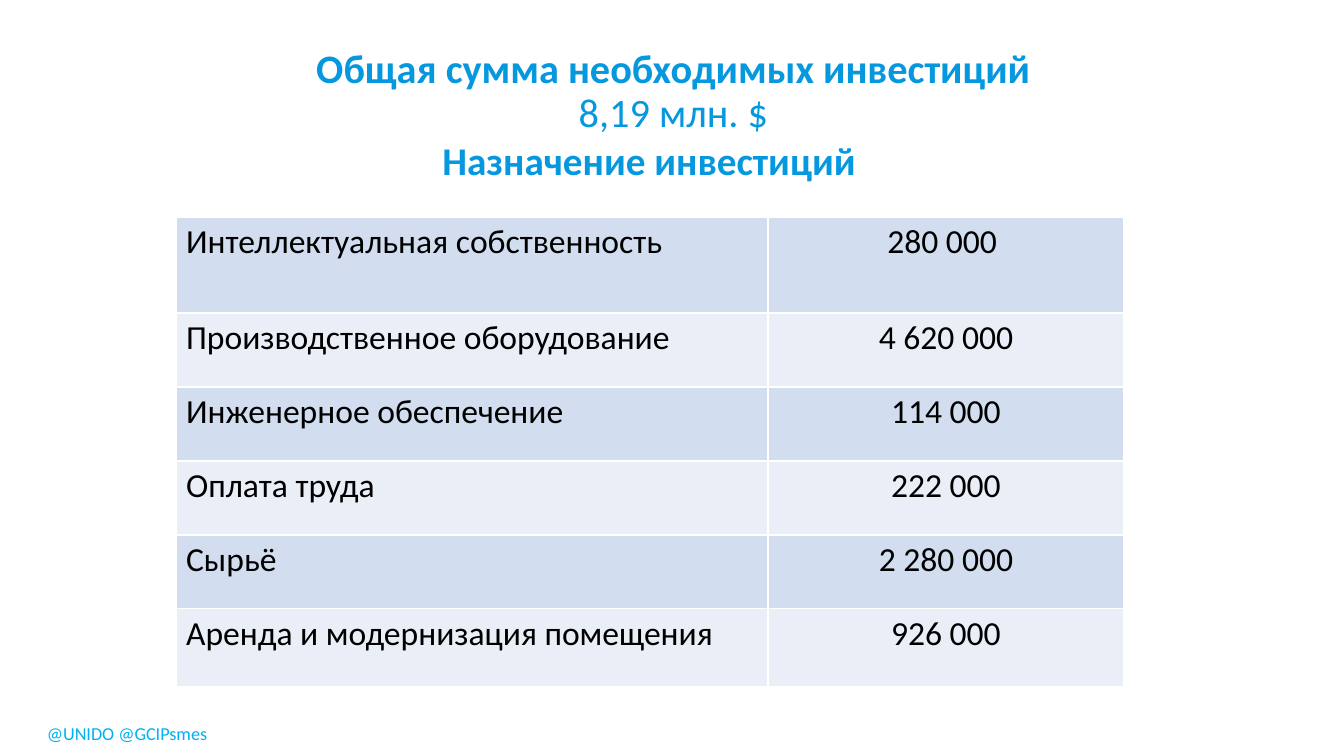
import pptx
import pptx.util
import pptx.dml.color
import pptx.enum.text
import pptx.oxml.ns
from lxml import etree

COLORS = {"heading": "0698DF", "footer": "00B0F0", "text": "000000",
          "odd": "D2DEEF", "even": "EAEFF7", "border": "FFFFFF"}
FONT = "Calibri"
ALIGN = pptx.enum.text.PP_ALIGN
ANCHOR = pptx.enum.text.MSO_ANCHOR

INVESTMENTS = [
    ("Интеллектуальная собственность", "280 000 "),
    ("Производственное оборудование", "4 620 000"),
    ("Инженерное обеспечение", "114 000"),
    ("Оплата труда", "222 000"),
    ("Сырьё", "2 280 000"),
    ("Аренда и модернизация помещения", "926 000"),
]


def px(n):
    return pptx.util.Emu(round(n * 914400 / 100.8))


def rgb(name):
    return pptx.dml.color.RGBColor.from_string(COLORS[name])


def apply(target, values):
    for name, value in values.items():
        setattr(target, name, value)


class Deck:
    def __init__(self):
        self.prs = pptx.Presentation()
        apply(self.prs, {"slide_width": px(1344), "slide_height": px(756)})
        self.s = self.prs.slides.add_slide(self.prs.slide_layouts[5])

    def run(self, p, text, size, color, bold=False):
        r = p.add_run()
        r.text = text
        apply(r.font, {"name": FONT, "size": pptx.util.Pt(size), "bold": bold})
        r.font.color.rgb = rgb(color)

    def title(self, box, lines, size, frame):
        sp = self.s.shapes.title
        apply(sp, dict(zip(("left", "top", "width", "height"), map(px, box))))
        tf = sp.text_frame
        apply(tf, {"auto_size": pptx.enum.text.MSO_AUTO_SIZE.NONE, **frame})
        p = tf.paragraphs[0]
        apply(p, {"alignment": ALIGN.CENTER, "line_spacing": 0.9})
        for i, (text, bold) in enumerate(lines):
            if i:
                p.add_line_break()
            self.run(p, text, size, "heading", bold)

    def text(self, box, text, size, color, bold=False, frame={}, para={}):
        tf = self.s.shapes.add_textbox(*map(px, box)).text_frame
        apply(tf, frame)
        p = tf.paragraphs[0]
        apply(p, para)
        self.run(p, text, size, color, bold)

    def cell(self, cell, text, align, fill):
        # Borders come before the fill in the cell properties
        tcPr = cell._tc.get_or_add_tcPr()
        for side in ("lnL", "lnR", "lnT", "lnB"):
            ln = etree.SubElement(tcPr, pptx.oxml.ns.qn("a:" + side), w="12700")
            solid = etree.SubElement(ln, pptx.oxml.ns.qn("a:solidFill"))
            etree.SubElement(solid, pptx.oxml.ns.qn("a:srgbClr"), val=COLORS["border"])
        cell.fill.solid()
        cell.fill.fore_color.rgb = rgb(fill)
        p = cell.text_frame.paragraphs[0]
        p.alignment = align
        self.run(p, text, 24, "text")

    def table(self, left, top, widths, heights, rows):
        box = (left, top, sum(widths), sum(heights))
        table = self.s.shapes.add_table(len(rows), len(widths), *map(px, box)).table
        table.first_row = False
        for col, width in zip(table.columns, widths):
            col.width = px(width)
        for i, (row, height, values) in enumerate(zip(table.rows, heights, rows)):
            row.height = px(height)
            fill = "even" if i % 2 else "odd"
            for cell, value, align in zip(row.cells, values, (ALIGN.LEFT, ALIGN.CENTER)):
                self.cell(cell, value, align, fill)


def main():
    deck = Deck()

    # Footer handles
    deck.text((37, 717, 182, 32), "@UNIDO @GCIPsmes", 13, "footer",
              frame={"word_wrap": False})

    # Headings
    deck.title((238, 40, 871, 149),
               [("Общая сумма необходимых инвестиций", True), ("8,19 млн. $", False)],
               28.8, {"vertical_anchor": ANCHOR.TOP, "margin_top": px(9)})
    deck.text((426, 139, 446, 50), "Назначение инвестиций", 28, "heading", True,
              {"word_wrap": True, "vertical_anchor": ANCHOR.BOTTOM},
              {"alignment": ALIGN.CENTER, "line_spacing": 0.9})

    # Investment table
    deck.table(176, 217, [592, 356], [96] + [74] * 4 + [78], INVESTMENTS)

    deck.prs.save("out.pptx")


if __name__ == "__main__":
    main()
